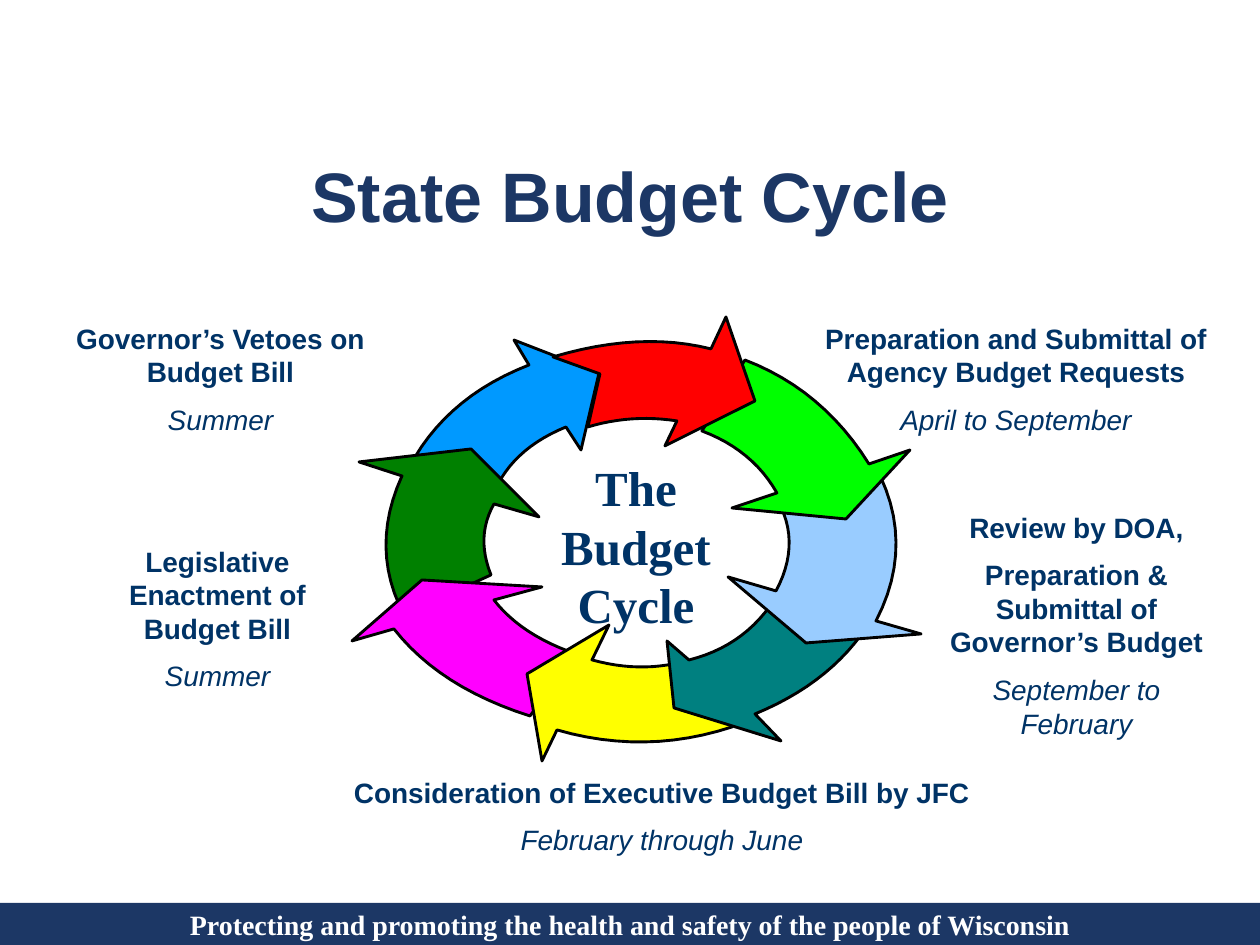
from pptx import Presentation
from pptx.dml.color import RGBColor as RGB
from pptx.enum.shapes import MSO_SHAPE as Shape
from pptx.enum.text import MSO_ANCHOR as Anchor, PP_ALIGN as Align
from pptx.util import Emu, Pt

PX = 914400 / 126
NAVY = RGB(0x1C, 0x37, 0x65)
INK = RGB(0x00, 0x33, 0x66)
WHITE = RGB(0xFF, 0xFF, 0xFF)
BLACK = RGB(0x00, 0x00, 0x00)
RED = RGB(0xFF, 0x00, 0x00)
LIME = RGB(0x00, 0xFF, 0x00)
PALE_BLUE = RGB(0x99, 0xCC, 0xFF)
TEAL = RGB(0x00, 0x80, 0x80)
YELLOW = RGB(0xFF, 0xFF, 0x00)
MAGENTA = RGB(0xFF, 0x00, 0xFF)
GREEN = RGB(0x00, 0x80, 0x00)
BLUE = RGB(0x00, 0x99, 0xFF)
SANS, SERIF = "Arial", "Times New Roman"

# Each arrow: fill, outer arc (start, middle, end), head, inner arc, tail notch
ARROWS = [
    (BLUE, [(415, 457), (462, 403), (529, 365)],
     [(514, 340), (599, 373), (581, 450)],
     [(566, 427), (525, 451), (498, 484)], []),
    (GREEN, [(404, 615), (386, 547), (402, 476)],
     [(359, 462), (471, 449), (539, 517)],
     [(494, 504), (484, 538), (491, 575)], []),
    (MAGENTA, [(530, 716), (451, 680), (394, 629)],
     [(352, 641), (422, 580), (542, 587)],
     [(494, 600), (528, 631), (576, 654)], []),
    (YELLOW, [(732, 727), (645, 742), (557, 730)],
     [(542, 761), (527, 674), (609, 625)],
     [(592, 660), (638, 667), (682, 662)], []),
    (TEAL, [(861, 635), (816, 680), (755, 714)],
     [(781, 741), (674, 708), (667, 641)],
     [(689, 660), (735, 640), (770, 606)], []),
    (PALE_BLUE, [(874, 464), (896, 542), (876, 621)],
     [(921, 634), (806, 643), (728, 577)],
     [(776, 591), (789, 548), (781, 507)], []),
    (LIME, [(745, 360), (815, 401), (869, 464)],
     [(910, 450), (846, 519), (732, 508)],
     [(777, 493), (746, 456), (702, 431)], []),
    (RED, [(553, 357), (636, 342), (711, 349)],
     [(726, 317), (755, 401), (665, 446)],
     [(677, 421), (632, 419), (588, 427)], [(600, 374)]),
]

# Each stage: left, top, width, height, bold lines, italic date
STAGES = [
    (924, 504, 305, 251,
     ["Review by DOA,", "Preparation & Submittal of Governor’s Budget"],
     "September to February"),
    (284, 769, 756, 113, ["Consideration of Executive Budget Bill by JFC"],
     "February through June"),
    (73, 538, 289, 165, ["Legislative Enactment of Budget Bill"], "Summer"),
    (63, 315, 315, 131, ["Governor’s Vetoes on Budget Bill"], "Summer"),
    (772, 315, 488, 131,
     ["Preparation and Submittal of Agency Budget Requests"],
     "April to September"),
]


def px(length):
    return Emu(round(length * PX))


def arc(start, middle, end, steps=12):
    """Points on the parabola through three points."""
    points = []
    for step in range(steps + 1):
        t = step / steps
        weights = ((1 - t) * (1 - 2 * t), 4 * t * (1 - t), t * (2 * t - 1))
        points.append(tuple(
            sum(w * value for w, value in zip(weights, axis))
            for axis in zip(start, middle, end)))
    return points


class Painter:
    def __init__(self, slide):
        self.slide = slide

    def add_span(self, para, text, size, color, font=SANS, bold=True,
                 italic=False):
        para.alignment = Align.CENTER
        span = para.add_run()
        span.text = text
        span.font.name, span.font.size = font, Pt(size)
        span.font.bold, span.font.italic = bold, italic
        span.font.color.rgb = color

    def title(self, text, *bounds):
        box = self.slide.shapes.title
        box.left, box.top, box.width, box.height = map(px, bounds)
        box.text_frame.vertical_anchor = Anchor.MIDDLE
        self.add_span(box.text_frame.paragraphs[0], text, 40, NAVY)

    def banner(self, text, *bounds):
        bar = self.slide.shapes.add_shape(Shape.RECTANGLE, *map(px, bounds))
        bar.shadow.inherit = False
        bar.fill.solid()
        bar.fill.fore_color.rgb = NAVY
        bar.line.fill.background()
        bar.text_frame.word_wrap = False
        bar.text_frame.vertical_anchor = Anchor.MIDDLE
        self.add_span(bar.text_frame.paragraphs[0], text, 16, WHITE, SERIF)

    def arrow(self, color, outer, head, inner, notch):
        points = arc(*outer) + head + arc(*inner) + notch
        first, *rest = [(px(x), px(y)) for x, y in points]
        builder = self.slide.shapes.build_freeform(*first)
        builder.add_line_segments(rest, close=True)
        shape = builder.convert_to_shape()
        shape.shadow.inherit = False
        shape.fill.solid()
        shape.fill.fore_color.rgb = color
        shape.line.color.rgb = BLACK
        shape.line.width = Pt(1.63)

    def label(self, bounds, lines, size, font=SANS, date=None):
        box = self.slide.shapes.add_textbox(*map(px, bounds))
        frame = box.text_frame
        frame.word_wrap = True
        entries = [(line, False) for line in lines]
        if date:
            entries.append((date, True))
        for index, (line, italic) in enumerate(entries):
            para = frame.add_paragraph() if index else frame.paragraphs[0]
            if index:
                para.space_before = Pt(size / 2)
            self.add_span(para, line, size, INK, font, not italic, italic)


def main():
    deck = Presentation()
    deck.slide_width, deck.slide_height = px(1260), px(945)
    painter = Painter(deck.slides.add_slide(deck.slide_layouts[5]))

    # Footer and title
    painter.banner("Protecting and promoting the health and safety of the "
                   "people of Wisconsin", 0, 903, 1260, 42)
    painter.title("State Budget Cycle", 63, 116, 1134, 158)

    # Ring of arrows
    for arrow in ARROWS:
        painter.arrow(*arrow)

    # Centre and stage labels
    painter.label((535, 451, 202, 189), ["The Budget Cycle"], 28, SERIF)
    for *bounds, lines, date in STAGES:
        painter.label(bounds, lines, 16, date=date)

    deck.save("out.pptx")


if __name__ == "__main__":
    main()
